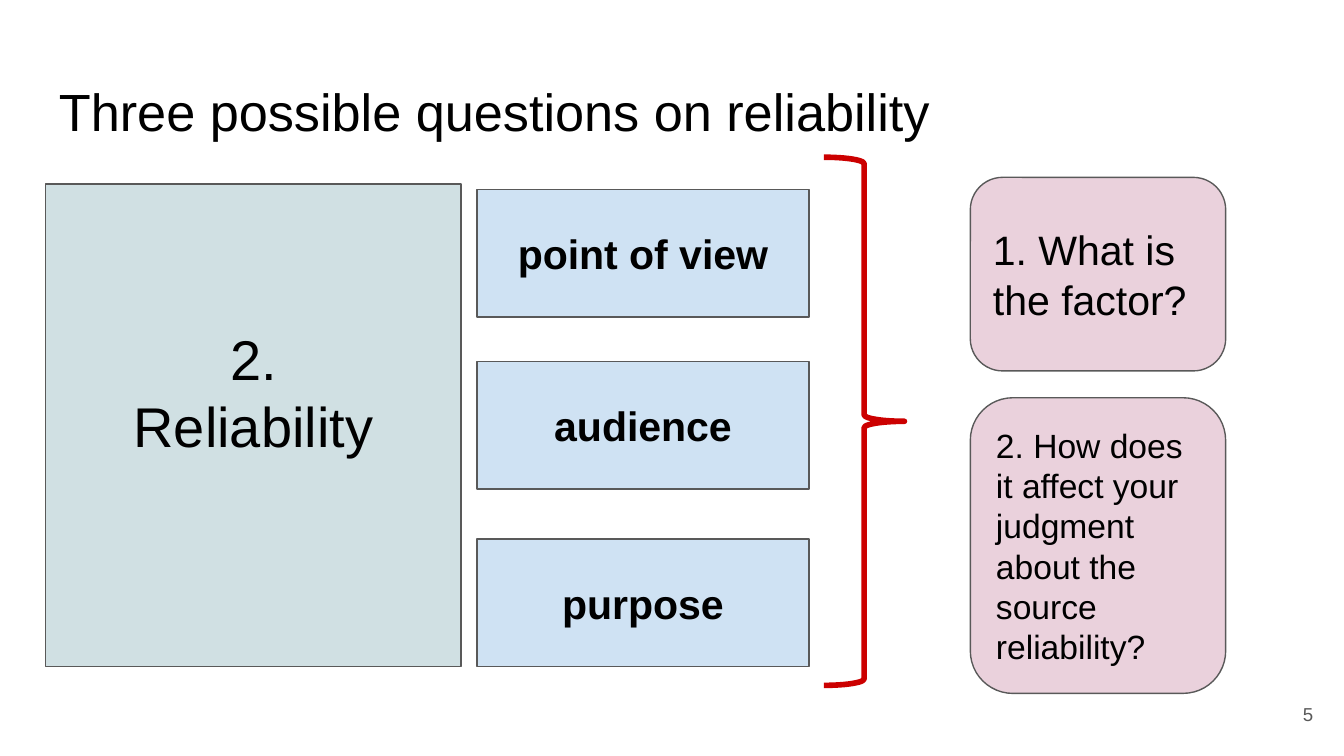
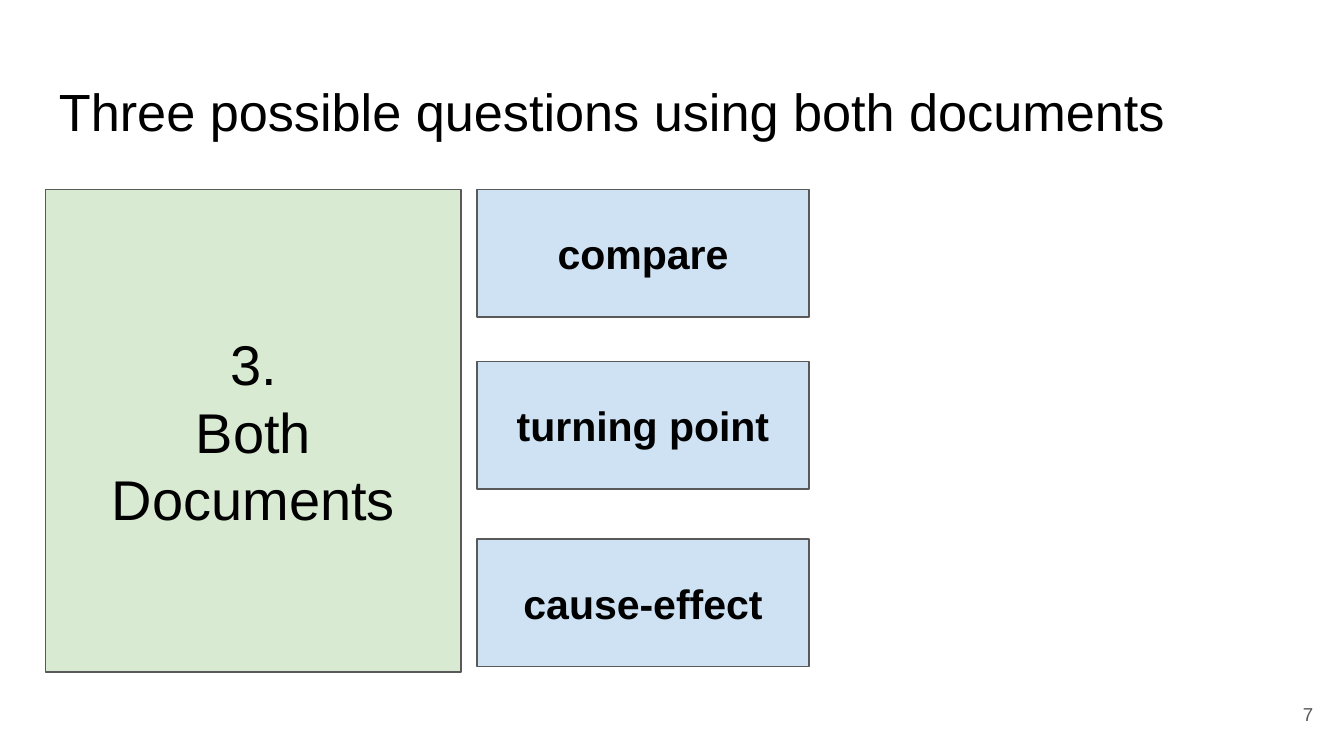
import pptx
import pptx.dml.color
import pptx.enum.shapes
import pptx.enum.text
import pptx.util

Inches = pptx.util.Inches
Shapes = pptx.enum.shapes.MSO_SHAPE
Align = pptx.enum.text.PP_ALIGN
Anchor = pptx.enum.text.MSO_ANCHOR

BLACK, GRAY, RED = "000000", "595959", "CC0000"
TEAL, GREEN, BLUE, PINK = "D0E0E3", "D9EAD3", "CFE2F3", "EAD1DC"
MARGIN = 0.1
LEFT = 0.34
FACTOR_TOPS = (1.41, 2.69, 4.01)


def color(hex_string):
    return pptx.dml.color.RGBColor.from_string(hex_string)


class Deck:
    """Holds the shared style and the slide being built."""

    def __init__(self):
        self.presentation = pptx.Presentation()
        self.presentation.slide_width = Inches(10)
        self.presentation.slide_height = Inches(5.625)
        self.slide = None

    def new_slide(self, title, number):
        self.slide = self.presentation.slides.add_slide(self.presentation.slide_layouts[6])
        self.label(title, (LEFT, 0.49, 9.32, 0.63), 28, anchor=Anchor.TOP)
        self.label(number, (9.27, 5.1, 0.6, 0.43), 10, GRAY, Align.RIGHT)

    def set_text(self, holder, text, size, ink=BLACK, align=Align.LEFT, bold=False,
                 anchor=Anchor.MIDDLE, bottom=MARGIN):
        """Fill a shape or text box; each line of text becomes a paragraph."""
        frame = holder.text_frame
        frame_format = {"word_wrap": True, "vertical_anchor": anchor,
                        "margin_bottom": Inches(bottom)}
        for side in ("left", "top", "right"):
            frame_format[f"margin_{side}"] = Inches(MARGIN)
        for name, value in frame_format.items():
            setattr(frame, name, value)
        frame.text = text
        font_format = {"name": "Arial", "size": pptx.util.Pt(size), "bold": bold}
        for paragraph in frame.paragraphs:
            paragraph.alignment = align
            for run in paragraph.runs:
                for name, value in font_format.items():
                    setattr(run.font, name, value)
                run.font.color.rgb = color(ink)

    def label(self, text, place, size, ink=BLACK, align=Align.LEFT, anchor=Anchor.MIDDLE):
        box = self.slide.shapes.add_textbox(*map(Inches, place))
        self.set_text(box, text, size, ink, align, anchor=anchor)

    def outline(self, kind, place, line=GRAY, width=0.75):
        """Add an unfilled preset shape."""
        shape = self.slide.shapes.add_shape(kind, *map(Inches, place))
        shape.shadow.inherit = False
        shape.fill.background()
        shape.line.color.rgb = color(line)
        shape.line.width = pptx.util.Pt(width)
        return shape

    def card(self, text, place, fill, size, kind=Shapes.RECTANGLE, **text_format):
        card = self.outline(kind, place)
        card.fill.solid()
        card.fill.fore_color.rgb = color(fill)
        self.set_text(card, text, size, **text_format)

    def topic(self, text, top, fill, bottom=MARGIN):
        self.card(text, (LEFT, top, 3.09, 3.59), fill, 30, align=Align.CENTER, bottom=bottom)

    def factors(self, names):
        for name, top in zip(names, FACTOR_TOPS):
            self.card(name, (3.55, top, 2.47, 0.95), BLUE, 22, align=Align.CENTER, bold=True)

    def brace(self, place):
        brace = self.outline(Shapes.RIGHT_BRACE, place, RED, 3)
        brace.adjustments[0] = 0.08

    def question(self, text, top, height, size):
        self.card(text, (7.22, top, 1.9, height), PINK, size, Shapes.ROUNDED_RECTANGLE)


def main():
    deck = Deck()

    deck.new_slide("Three possible questions on reliability", "5")
    deck.topic("2.\nReliability", 1.37, TEAL, bottom=0.6)
    deck.factors(("point of view", "audience", "purpose"))
    deck.brace((6.13, 1.17, 0.6, 3.93))
    deck.question("1. What is the factor?", 1.32, 1.44, 22)
    deck.question("2. How does it affect your judgment about the source reliability?",
                  2.96, 2.2, 18)

    deck.new_slide("Three possible questions using both documents", "7")
    deck.factors(("compare", "turning point", "cause-effect"))
    deck.topic("3.\nBoth Documents", 1.41, GREEN)

    deck.presentation.save("out.pptx")


if __name__ == "__main__":
    main()
